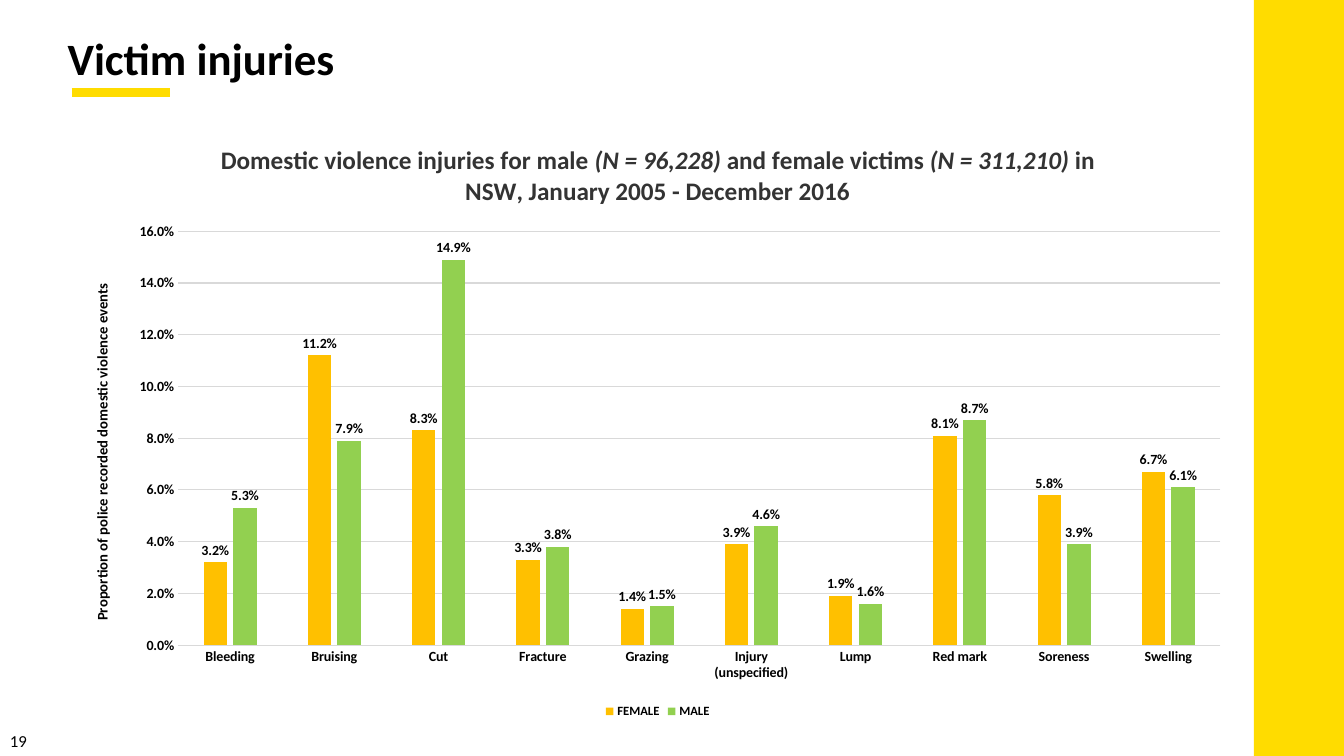
from lxml.etree import SubElement
from pptx import Presentation
from pptx.chart.data import CategoryChartData
from pptx.dml.color import RGBColor
from pptx.enum.chart import XL_CHART_TYPE, XL_LABEL_POSITION, XL_LEGEND_POSITION, XL_TICK_MARK
from pptx.enum.shapes import MSO_CONNECTOR, MSO_SHAPE
from pptx.enum.text import MSO_ANCHOR, PP_ALIGN
from pptx.oxml import parse_xml
from pptx.oxml.ns import nsdecls, qn
from pptx.util import Inches, Pt

YELLOW = RGBColor(0xFF, 0xDC, 0x00)
AMBER = RGBColor(0xFF, 0xC0, 0x00)
GREEN = RGBColor(0x92, 0xD0, 0x50)
BLACK = RGBColor(0x00, 0x00, 0x00)
CHARCOAL = RGBColor(0x33, 0x33, 0x33)
PALE_GREY = RGBColor(0xD9, 0xD9, 0xD9)
WHITE = RGBColor(0xFF, 0xFF, 0xFF)

COLUMNS, ROWS = 160, 90
PERCENT = "0.0%"
INJURIES = {
    "Bleeding": (0.032, 0.053),
    "Bruising": (0.112, 0.079),
    "Cut": (0.083, 0.149),
    "Fracture": (0.033, 0.038),
    "Grazing": (0.014, 0.015),
    "Injury (unspecified)": (0.039, 0.046),
    "Lump": (0.019, 0.016),
    "Red mark": (0.081, 0.087),
    "Soreness": (0.058, 0.039),
    "Swelling": (0.067, 0.061),
}
VICTIMS = {"FEMALE": AMBER, "MALE": GREEN}
HEADING = (
    ("Domestic violence injuries for male ", False),
    ("(N = 96,228)", True),
    (" and female victims ", False),
    ("(N = 311,210)", True),
    (" in NSW, January 2005 - December 2016", False),
)


def style_font(font, size=10, color=BLACK, bold=True, italic=False, name="Calibri"):
    """Apply the deck's lettering to a font."""
    font.size, font.bold, font.italic, font.name = Pt(size), bold, italic, name
    font.color.rgb = color


def write(paragraph, text, **style):
    """Add a styled run to a paragraph."""
    run = paragraph.add_run()
    run.text = text
    style_font(run.font, **style)


class InjurySlide:
    """Place elements on a slide measured in grid columns and rows."""

    def __init__(self, deck):
        """Start a title-only slide in the deck."""
        self.column = deck.slide_width / COLUMNS
        self.row = deck.slide_height / ROWS
        self.slide = deck.slides.add_slide(deck.slide_layouts[5])
        self.shapes = self.slide.shapes

    def place(self, left, top, width, height):
        """Turn grid units into slide lengths."""
        return (round(left * self.column), round(top * self.row),
                round(width * self.column), round(height * self.row))

    def band(self, *area, color):
        """Draw a plain filled rectangle."""
        band = self.shapes.add_shape(MSO_SHAPE.RECTANGLE, *self.place(*area))
        band.shadow.inherit = False
        band.fill.solid()
        band.fill.fore_color.rgb = color
        band.line.fill.background()

    def rule(self, start, end, level, color, weight):
        """Draw a horizontal line."""
        rule = self.shapes.add_connector(
            MSO_CONNECTOR.STRAIGHT, *self.place(start, level, end, level))
        rule.line.color.rgb = color
        rule.line.width = Pt(weight)
        SubElement(rule._element.spPr, qn("a:effectLst"))

    def title(self, text, *area):
        """Move and fill the title placeholder."""
        title = self.shapes.title
        title.left, title.top, title.width, title.height = self.place(*area)
        title.text_frame.vertical_anchor = MSO_ANCHOR.TOP
        paragraph = title.text_frame.paragraphs[0]
        paragraph.alignment = PP_ALIGN.LEFT
        write(paragraph, text, size=32)

    def label(self, text, *area, **style):
        """Add a one-line text box."""
        frame = self.shapes.add_textbox(*self.place(*area)).text_frame
        frame.word_wrap = False
        write(frame.paragraphs[0], text, **style)

    def chart(self, *area):
        """Add the clustered columns of injuries by victim sex."""
        data = CategoryChartData(number_format=PERCENT)
        data.categories = list(INJURIES)
        for victim, shares in zip(VICTIMS, zip(*INJURIES.values())):
            data.add_series(victim, shares)
        chart = self.shapes.add_chart(
            XL_CHART_TYPE.COLUMN_CLUSTERED, *self.place(*area), data).chart
        style_font(chart.font)
        self.frame(chart)
        heading = chart.chart_title.text_frame.paragraphs[0]
        for text, italic in HEADING:
            write(heading, text, size=18, color=CHARCOAL, italic=italic)
        chart.chart_title.include_in_layout = False
        chart.has_legend = True
        chart.legend.position = XL_LEGEND_POSITION.BOTTOM
        chart.legend.include_in_layout = False
        style_font(chart.legend.font, size=9)
        self.axes(chart)
        self.bars(chart.plots[0])

    def frame(self, chart):
        """Give the chart area a white fill and a thin border."""
        chart.font._element.getparent().getparent().addprevious(parse_xml(
            f'<c:spPr {nsdecls("c", "a")}>'
            f'<a:solidFill><a:srgbClr val="{WHITE}"/></a:solidFill>'
            f'<a:ln w="{Pt(0.75)}"><a:solidFill><a:srgbClr val="{PALE_GREY}"/>'
            '</a:solidFill></a:ln></c:spPr>'))

    def axes(self, chart):
        """Format both axes and the gridlines."""
        injury, proportion = chart.category_axis, chart.value_axis
        for axis in (injury, proportion):
            axis.major_tick_mark = axis.minor_tick_mark = XL_TICK_MARK.NONE
            style_font(axis.tick_labels.font)
        proportion.minimum_scale, proportion.maximum_scale = 0, 0.16
        proportion.major_unit = 0.02
        proportion.tick_labels.number_format = PERCENT
        proportion.tick_labels.number_format_is_linked = False
        proportion.format.line.fill.background()
        for line in (injury.format.line, proportion.major_gridlines.format.line):
            line.color.rgb = PALE_GREY
            line.width = Pt(0.75)
        write(proportion.axis_title.text_frame.paragraphs[0],
              "Proportion of police recorded domestic violence events", size=10.5)

    def bars(self, plot):
        """Colour, space and label the columns."""
        plot.gap_width, plot.overlap = 219, -27
        plot.vary_by_categories = False
        for victim in plot.series:
            victim.format.fill.solid()
            victim.format.fill.fore_color.rgb = VICTIMS[victim.name]
            victim.invert_if_negative = False
            labels = victim.data_labels
            labels.show_value = True
            labels.number_format = PERCENT
            labels.number_format_is_linked = False
            labels.position = XL_LABEL_POSITION.OUTSIDE_END
            style_font(labels.font)


def main():
    """Build and save the slide."""
    deck = Presentation()
    deck.slide_width, deck.slide_height = Inches(13.33), Inches(7.5)
    page = InjurySlide(deck)
    page.band(149.28, 0, 10.72, ROWS, color=YELLOW)
    page.rule(8.52, 20.28, 11.04, YELLOW, 6)
    page.title("Victim injuries", 6.84, 3, 150.12, 7.68)
    page.chart(8.52, 14.64, 139.56, 71.4)
    page.label("19", 0, 86.4, 4.44, 3.6, size=12, bold=False)
    deck.save("out.pptx")


if __name__ == "__main__":
    main()
